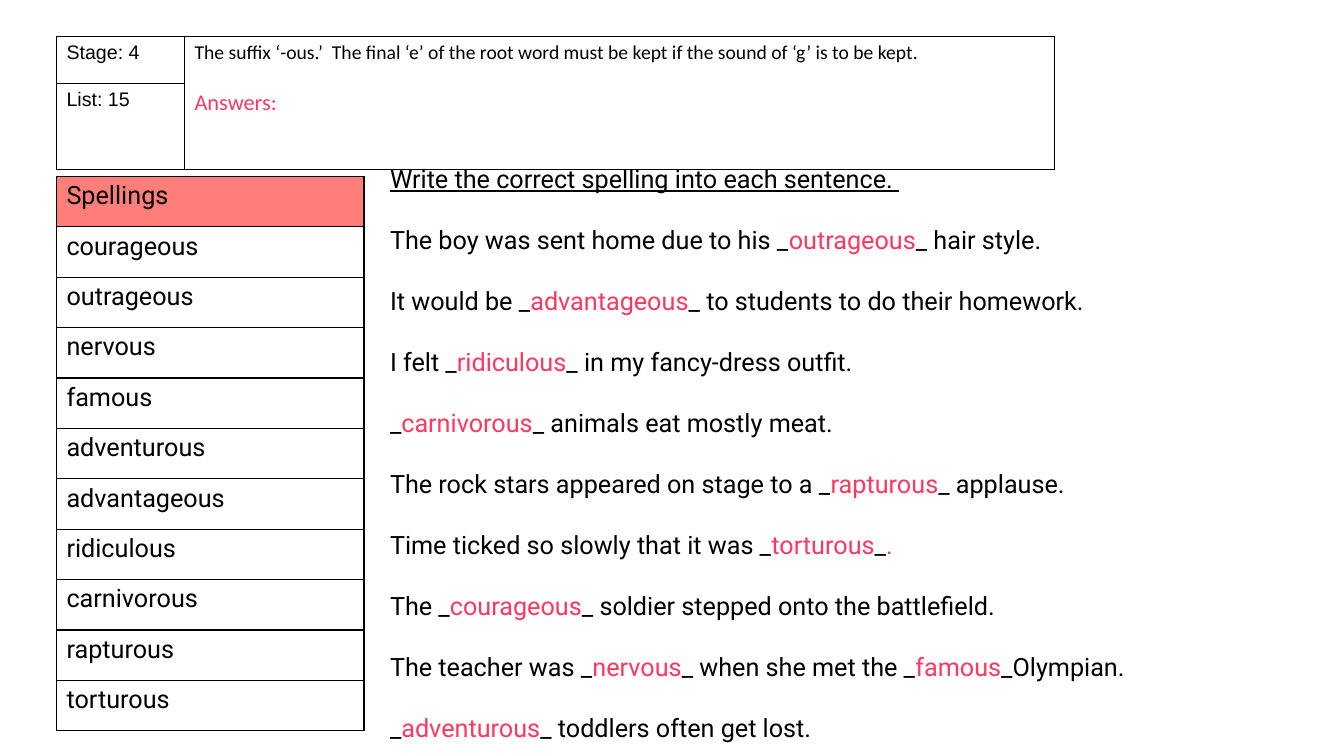
from lxml import etree
from pptx import Presentation
from pptx.dml.color import RGBColor
from pptx.enum.text import MSO_ANCHOR
from pptx.oxml.ns import qn
from pptx.util import Inches, Pt

TOP = MSO_ANCHOR.TOP
BLACK = RGBColor(0x00, 0x00, 0x00)
ANSWER_PINK = RGBColor(0xFF, 0x38, 0x60)
HEADER_CORAL = RGBColor(0xFF, 0x7E, 0x79)

LABEL = {"name": "Arial", "size": Pt(14)}
RULE = {"name": "Calibri", "size": Pt(14)}
ANSWERS = {"name": "Calibri", "size": Pt(16)}
WORD = {"name": "Roboto", "size": Pt(18)}
INSTRUCTION = {**WORD, "underline": True}

LEFT = 0.56
STAGE_BOX = (LEFT, 0.36, 9.9, 1.32)
SPELLINGS_BOX = (LEFT, 1.75, 3.05, 5.5)
SENTENCES_BOX = (3.77, 1.57, 9.56, 5.86)

SPELLINGS = [
    "Spellings", "courageous", "outrageous", "nervous", "famous",
    "adventurous", "advantageous", "ridiculous", "carnivorous",
    "rapturous", "torturous",
]
SENTENCES = [
    "The boy was sent home due to his _|outrageous|_ hair style.",
    "It would be _|advantageous|_ to students to do their homework.",
    "I felt _|ridiculous|_ in my fancy-dress outfit.",
    "_|carnivorous|_ animals eat mostly meat.",
    "The rock stars appeared on stage to a _|rapturous|_ applause.",
    "Time ticked so slowly that it was _|torturous|_|.",
    "The _|courageous|_ soldier stepped onto the battlefield.",
    "The teacher was _|nervous|_ when she met the _|famous|_Olympian.",
    "_|adventurous|_ toddlers often get lost.",
]


def add_words(paragraph, words, style, color=BLACK):
    run = paragraph.add_run()
    run.text = words
    for attribute, value in style.items():
        setattr(run.font, attribute, value)
    run.font.color.rgb = color


def add_borders(cell):
    properties = cell._tc.get_or_add_tcPr()
    for side in ("lnL", "lnR", "lnT", "lnB"):
        border = etree.SubElement(properties, qn(f"a:{side}"), w=str(Pt(1)))
        fill = etree.SubElement(border, qn("a:solidFill"))
        etree.SubElement(fill, qn("a:srgbClr"), val=str(BLACK))


def add_grid(slide, box, column_shares, row_shares):
    left, top, width, height = map(Inches, box)
    grid = slide.shapes.add_table(
        len(row_shares), len(column_shares), left, top, width, height
    ).table
    grid.first_row = grid.horz_banding = False
    for column, share in zip(grid.columns, column_shares):
        column.width = round(width * share / sum(column_shares))
    for row, share in zip(grid.rows, row_shares):
        row.height = round(height * share / sum(row_shares))
    for cell in grid.iter_cells():
        add_borders(cell)
        cell.fill.background()
    return grid


def add_stage_header(slide, box):
    grid = add_grid(slide, box, (1.27, 8.63), (0.47, 0.85))
    rule_cell = grid.cell(0, 1)
    rule_cell.merge(grid.cell(1, 1))
    for row, label in enumerate(("Stage: 4", "List: 15")):
        add_words(grid.cell(row, 0).text_frame.paragraphs[0], label, LABEL)
    rule = rule_cell.text_frame
    add_words(
        rule.paragraphs[0],
        "The suffix ‘-ous.’  The final ‘e’ of the root word must be kept "
        "if the sound of ‘g’ is to be kept.",
        RULE,
    )
    answers = rule.add_paragraph()
    answers.space_before = Pt(17)
    add_words(answers, "Answers:", ANSWERS, ANSWER_PINK)


def add_spelling_list(slide, box):
    grid = add_grid(slide, box, (1,), (1,) * len(SPELLINGS))
    for row, spelling in enumerate(SPELLINGS):
        add_words(grid.cell(row, 0).text_frame.paragraphs[0], spelling, WORD)
    heading_fill = grid.cell(0, 0).fill
    heading_fill.solid()
    heading_fill.fore_color.rgb = HEADER_CORAL


def add_sentences(slide, box):
    exercise = slide.shapes.add_textbox(*map(Inches, box)).text_frame
    exercise.word_wrap = True
    exercise.vertical_anchor = TOP
    add_words(
        exercise.paragraphs[0],
        "Write the correct spelling into each sentence. ",
        INSTRUCTION,
    )
    for sentence in SENTENCES:
        line = exercise.add_paragraph()
        line.space_before = Pt(22)
        for position, words in enumerate(sentence.split("|")):
            add_words(line, words, WORD, ANSWER_PINK if position % 2 else BLACK)


def main():
    deck = Presentation()
    deck.slide_width, deck.slide_height = Inches(13.33), Inches(7.5)
    slide = deck.slides.add_slide(deck.slide_layouts[6])
    add_spelling_list(slide, SPELLINGS_BOX)
    add_stage_header(slide, STAGE_BOX)
    add_sentences(slide, SENTENCES_BOX)
    deck.save("out.pptx")


if __name__ == "__main__":
    main()
